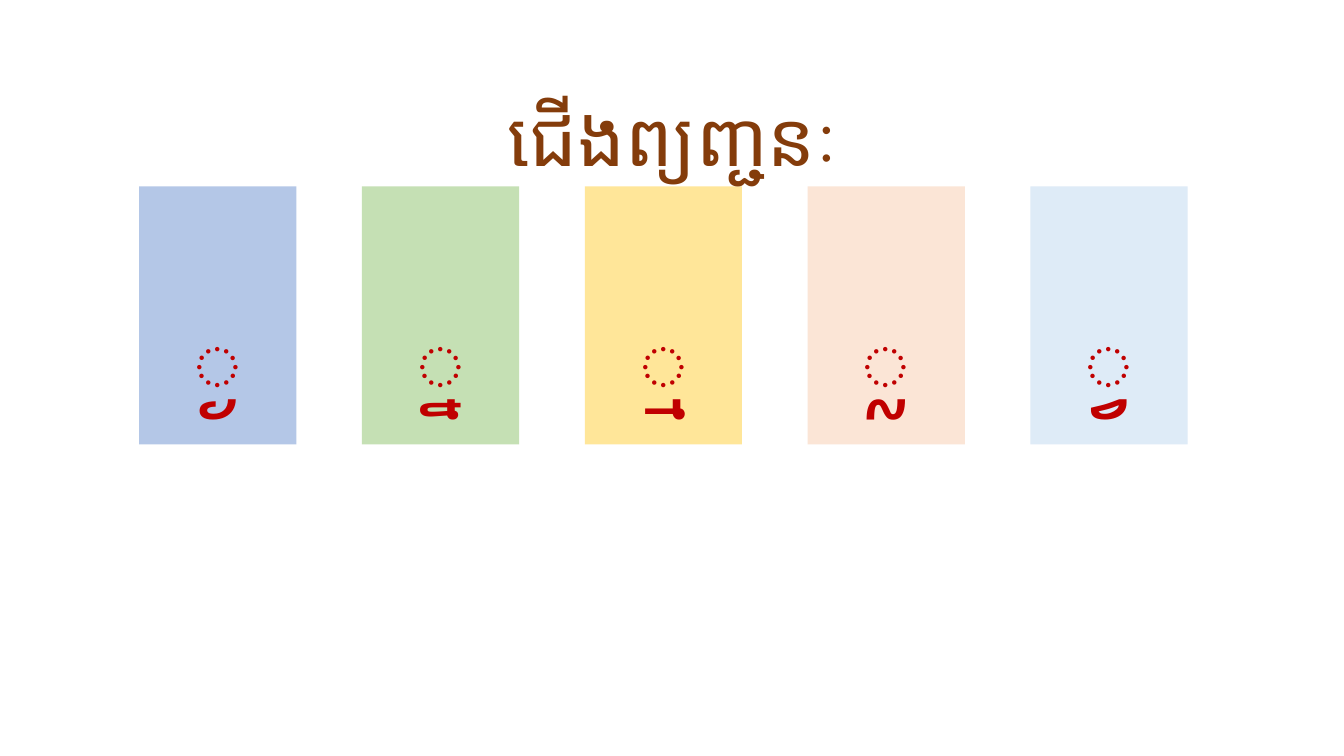
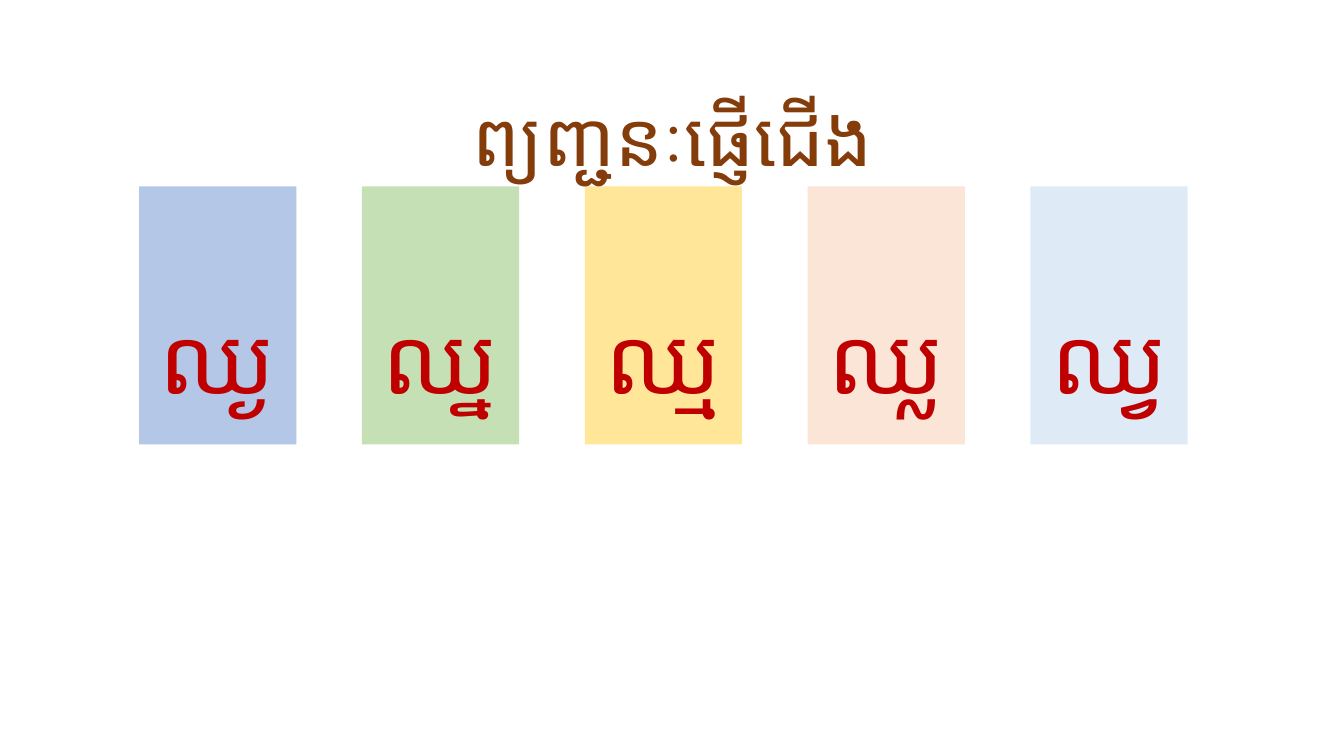
from dataclasses import dataclass

from pptx import Presentation
from pptx.dml.color import RGBColor
from pptx.enum.shapes import MSO_SHAPE
from pptx.enum.text import MSO_ANCHOR, PP_ALIGN
from pptx.oxml.ns import qn
from pptx.util import Inches, Pt


@dataclass(frozen=True)
class TextStyle:
    """Look of one kind of text."""
    font: str
    size: int
    color: str
    line_spacing: float


@dataclass(frozen=True)
class Theme:
    """Colours and type styles shared by the slides."""
    title: TextStyle = TextStyle("Lato", 54, "843C0B", 1.5)
    letter: TextStyle = TextStyle("Arial", 66, "C00000", 2.0)
    cards: tuple = ("B4C7E7", "C5E0B4", "FFE699", "FBE5D6", "DEEBF7")


THEME = Theme()
TITLE_BOX = (0.92, 0.4, 11.5, 1.45)
CARD_ROW_BOX = (1.38, 1.85, 10.4, 2.56)
CARD_WIDTH = 1.56

SLIDES = (
    ("ជើងព្យញ្ជនៈ", ("្ង", "្ន", "្ម", "្ល", "្វ")),
    ("ព្យញ្ជនៈផ្ញើជើង", ("ឈ្ង", "ឈ្ន", "ឈ្ម", "ឈ្ល", "ឈ្វ")),
)


def write_text(shape, text, style, anchor):
    """Write one centred paragraph in the given style."""
    frame = shape.text_frame
    frame.word_wrap = True
    frame.vertical_anchor = anchor
    paragraph = frame.paragraphs[0]
    paragraph.alignment = PP_ALIGN.CENTER
    paragraph.line_spacing = style.line_spacing
    run = paragraph.add_run()
    run.text = text
    run.font.name = style.font
    run.font.size = Pt(style.size)
    run.font.color.rgb = RGBColor.from_string(style.color)
    complex_font = run.font._element.makeelement(qn("a:cs"), {"typeface": style.font})
    run.font._element.append(complex_font)


def add_title(slide, box, text):
    """Place the slide title in its box."""
    shape = slide.shapes.add_textbox(*map(Inches, box))
    write_text(shape, text, THEME.title, MSO_ANCHOR.MIDDLE)


def add_card_row(slide, box, letters):
    """Spread one coloured card per letter evenly across the box."""
    left, top, width, height = box
    step = (width - CARD_WIDTH) / (len(letters) - 1)
    for index, (letter, color) in enumerate(zip(letters, THEME.cards)):
        card = slide.shapes.add_shape(
            MSO_SHAPE.RECTANGLE, Inches(left + index * step), Inches(top),
            Inches(CARD_WIDTH), Inches(height))
        card.shadow.inherit = False
        card.fill.solid()
        card.fill.fore_color.rgb = RGBColor.from_string(color)
        card.line.fill.background()
        write_text(card, letter, THEME.letter, MSO_ANCHOR.TOP)


def add_letter_slide(presentation, title, letters):
    """Add a slide with a title above a row of letter cards."""
    slide = presentation.slides.add_slide(presentation.slide_layouts[6])
    add_card_row(slide, CARD_ROW_BOX, letters)
    add_title(slide, TITLE_BOX, title)


def main():
    """Build and save the presentation."""
    presentation = Presentation()
    presentation.slide_width = Inches(13.33)
    presentation.slide_height = Inches(7.5)
    for title, letters in SLIDES:
        add_letter_slide(presentation, title, letters)
    presentation.save("out.pptx")


if __name__ == "__main__":
    main()
